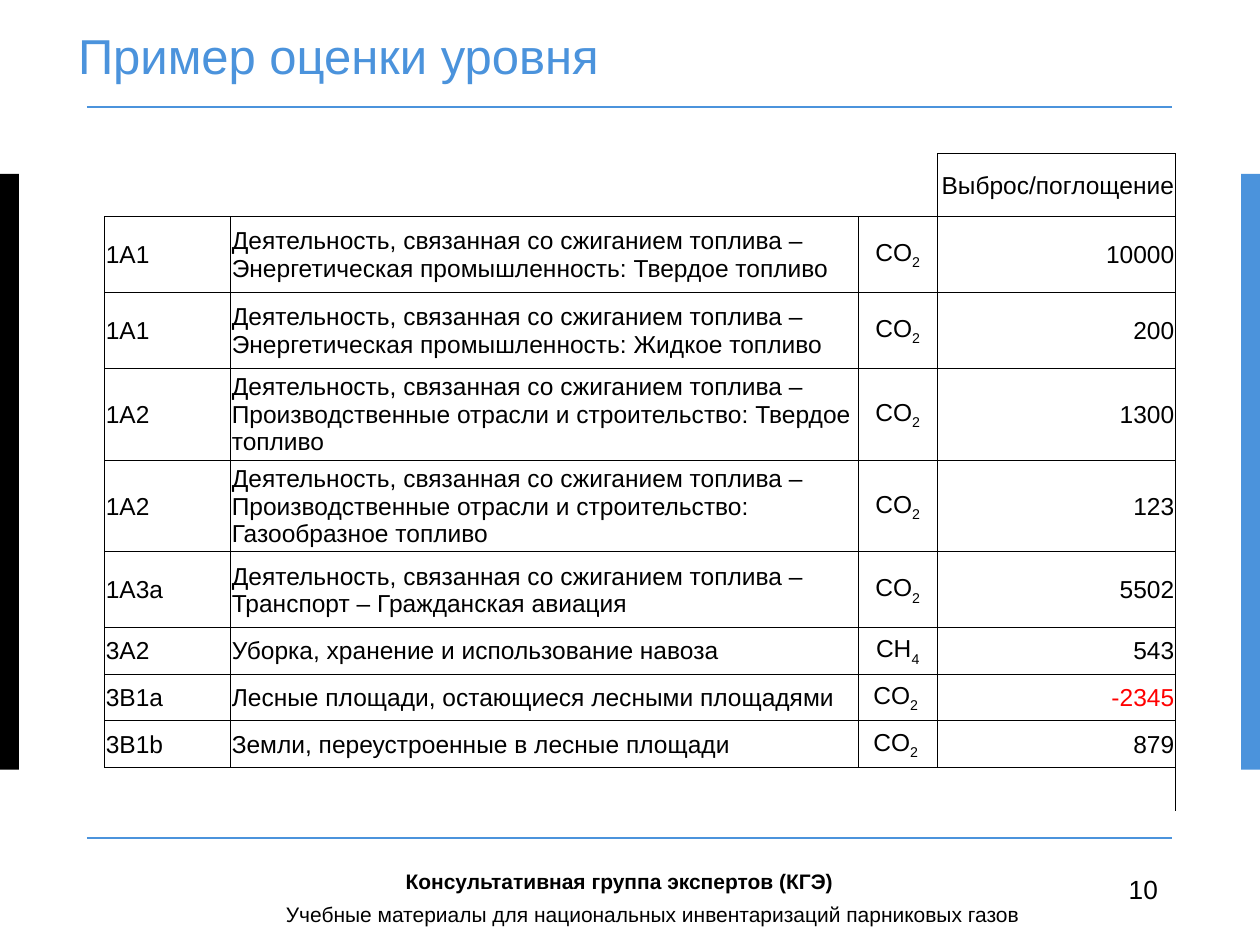
"""Build the slide with the level assessment table."""
from lxml import etree
from pptx import Presentation
from pptx.dml.color import RGBColor
from pptx.enum.shapes import MSO_CONNECTOR, MSO_SHAPE
from pptx.enum.text import MSO_ANCHOR, PP_ALIGN
from pptx.oxml.ns import qn
from pptx.util import Inches, Pt

RECT, LINE = MSO_SHAPE.RECTANGLE, MSO_CONNECTOR.STRAIGHT
MID, TOP = MSO_ANCHOR.MIDDLE, MSO_ANCHOR.TOP
LEFT, MIDDLE, RIGHT = PP_ALIGN.LEFT, PP_ALIGN.CENTER, PP_ALIGN.RIGHT

HUES = {"ink": "000000", "blue": "4B93DC", "red": "FF0000"}
FACE = "Arial"
WIDE, HIGH = 10, 7.5

TITLE = "Пример оценки уровня"
NOTES = [
    ("10", 8.86, 6.88, 0.47, 0.35, 15, False),
    ("Консультативная группа экспертов (КГЭ)", 3.12, 6.84, 3.85, 0.15, 12, True),
    ("Учебные материалы для национальных инвентаризаций парниковых газов",
     2.17, 7.11, 6.81, 0.1, 12, False),
]
HEAD = "Выброс/поглощение"
BURN = "Деятельность, связанная со сжиганием топлива – "
POWER = BURN + "Энергетическая промышленность: "
WORKS = BURN + "Производственные отрасли и строительство: "
ROWS = [
    ("1A1", POWER + "Твердое топливо", ("CO", "2"), 10000),
    ("1A1", POWER + "Жидкое топливо", ("CO", "2"), 200),
    ("1A2", WORKS + "Твердое топливо", ("CO", "2"), 1300),
    ("1A2", WORKS + "Газообразное топливо", ("CO", "2"), 123),
    ("1A3a", BURN + "Транспорт – Гражданская авиация", ("CO", "2"), 5502),
    ("3A2", "Уборка, хранение и использование навоза", ("CH", "4"), 543),
    ("3B1a", "Лесные площади, остающиеся лесными площадями", ("CO", "2 "), -2345),
    ("3B1b", "Земли, переустроенные в лесные площади", ("CO", "2 "), 879),
]
COLS = [1, 4.98, 0.63, 1.89]
TALL = [0.5, 0.6, 0.6, 0.73, 0.73, 0.6, 0.37, 0.37, 0.37, 0.35]
ALIGN = [LEFT, LEFT, MIDDLE, RIGHT]
SIDES = {"lnL": (0, -1), "lnR": (0, 1), "lnT": (-1, 0), "lnB": (1, 0)}


def paint(name):
    return RGBColor.from_string(HUES[name])


def style(para, size, hue="ink", bold=False):
    font = para.font
    font.name, font.size, font.bold = FACE, Pt(size), bold
    font.color.rgb = paint(hue)


def add_text(slide, text, x, y, w, h, size, bold=False, hue="ink"):
    box = slide.shapes.add_textbox(*map(Inches, (x, y, w, h)))
    frame = box.text_frame
    frame.word_wrap = True
    para = frame.paragraphs[0]
    para.text = text
    style(para, size, hue, bold)
    return frame


def add_title(slide):
    frame = add_text(slide, TITLE, 0.62, 0.29, 8.66, 0.55, 28, hue="blue")
    frame.margin_left = frame.margin_right = 0
    frame.margin_top = frame.margin_bottom = 0
    frame.vertical_anchor = MID
    frame.paragraphs[0].line_spacing = Pt(15)


def add_bar(slide, x, hue):
    bar = slide.shapes.add_shape(RECT, *map(Inches, (x, 1.38, 0.15, 4.73)))
    bar.shadow.inherit = False
    bar.fill.solid()
    bar.fill.fore_color.rgb = paint(hue)
    bar.line.fill.background()


def add_rule(slide, y):
    rule = slide.shapes.add_connector(LINE, *map(Inches, (0.69, y, 9.3, y)))
    rule.line.color.rgb = paint("blue")
    rule.line.width = Pt(1)
    etree.SubElement(rule._element.spPr, qn("a:effectLst"))


def boxed(row, col):
    inside = 0 <= col < len(COLS)
    return inside and (1 <= row <= len(ROWS) or (row, col) == (0, len(COLS) - 1))


def add_edges(cell, row, col):
    props = cell._tc.get_or_add_tcPr()
    for i, (tag, (down, over)) in enumerate(SIDES.items()):
        tail = tag == "lnR" and (row, col) == (len(TALL) - 1, len(COLS) - 1)
        edge = etree.Element(qn(f"a:{tag}"), w=str(Pt(0.5)))
        if boxed(row, col) or boxed(row + down, col + over) or tail:
            fill = etree.SubElement(edge, qn("a:solidFill"))
            etree.SubElement(fill, qn("a:srgbClr"), val=HUES["ink"])
        else:
            etree.SubElement(edge, qn("a:noFill"))
        props.insert(i, edge)


def fill_cell(cell, value, align):
    cell.fill.background()
    cell.vertical_anchor = MID
    cell.margin_left = cell.margin_right = cell.margin_top = Inches(0.01)
    cell.margin_bottom = 0
    para = cell.text_frame.paragraphs[0]
    para.alignment = align
    if isinstance(value, tuple):
        base, low = [para.add_run() for _ in value]
        base.text, low.text = value
        low._r.get_or_add_rPr().set("baseline", "-25000")
    elif value != "":
        para.text = str(value)
    minus = isinstance(value, int) and value < 0
    style(para, 14, "red" if minus else "ink")


def add_grid(slide):
    blank = ("",) * len(COLS)
    data = [blank[1:] + (HEAD,), *ROWS, blank]
    size = map(Inches, (0.83, 1.22, sum(COLS), sum(TALL)))
    grid = slide.shapes.add_table(len(TALL), len(COLS), *size).table
    grid.first_row = grid.horz_banding = False
    for col, width in zip(grid.columns, COLS):
        col.width = Inches(width)
    for r, (line, tall) in enumerate(zip(data, TALL)):
        grid.rows[r].height = Inches(tall)
        for c, value in enumerate(line):
            cell = grid.cell(r, c)
            fill_cell(cell, value, ALIGN[c])
            add_edges(cell, r, c)


def main():
    deck = Presentation()
    deck.slide_width, deck.slide_height = Inches(WIDE), Inches(HIGH)
    slide = deck.slides.add_slide(deck.slide_layouts[6])
    add_bar(slide, 0, "ink")
    add_bar(slide, WIDE - 0.15, "blue")
    for y in (0.85, 6.65):
        add_rule(slide, y)
    add_title(slide)
    add_grid(slide)
    for note in NOTES:
        add_text(slide, *note).vertical_anchor = TOP
    deck.save("out.pptx")


if __name__ == "__main__":
    main()
